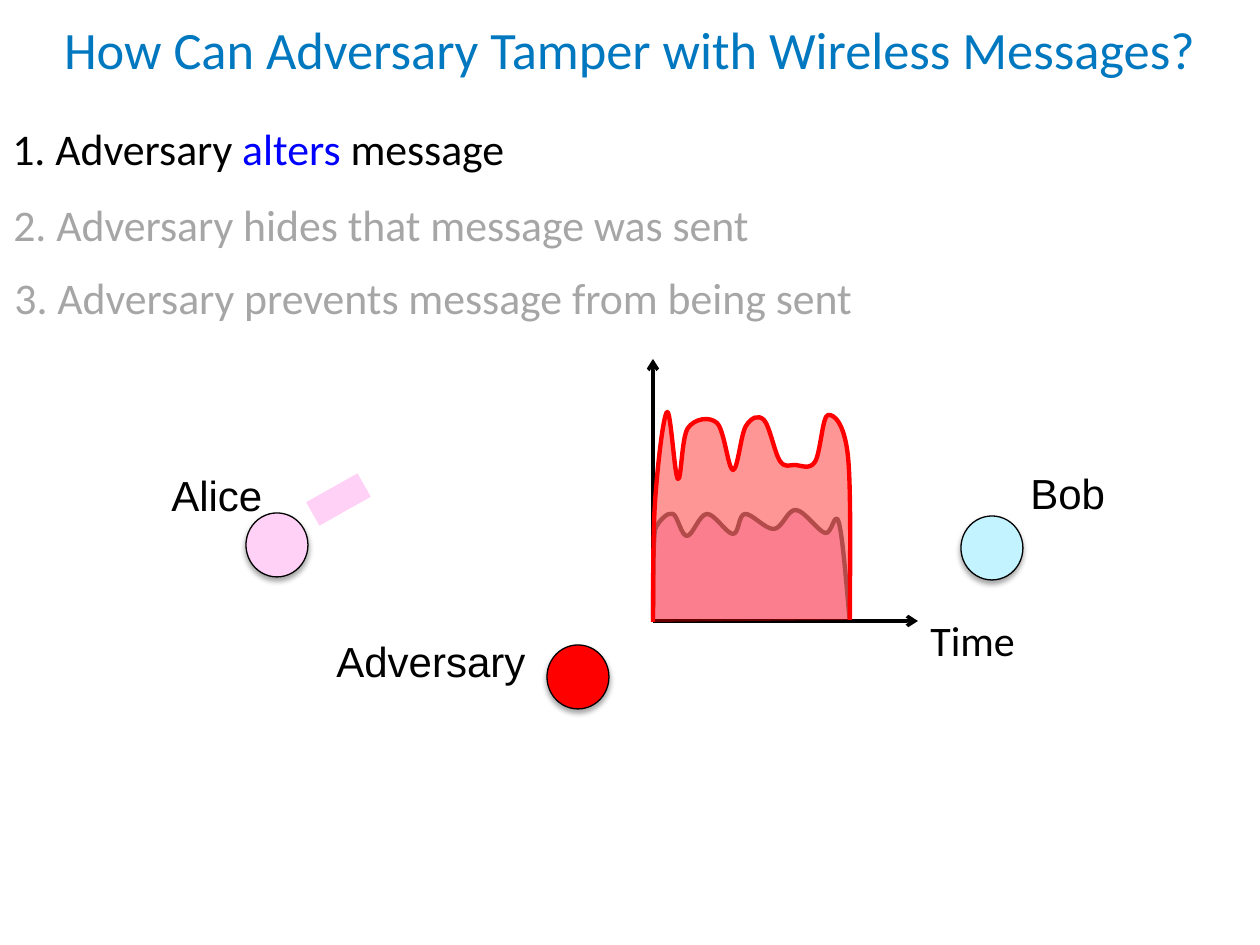
from pptx import Presentation, util as u
from pptx.dml.color import RGBColor
from pptx.enum import shapes, text
from pptx.oxml import parse_xml
from pptx.oxml.ns import nsdecls, qn
from lxml import etree

PX = u.Inches(1) // 126
CURVE_STEPS = 10  # path units per px
BLACK = RGBColor(0x00, 0x00, 0x00)
BLUE = RGBColor(0x00, 0x00, 0xFF)
TITLE_BLUE = RGBColor(0x00, 0x78, 0xC0)
GREY = RGBColor(0xA6, 0xA6, 0xA6)
CURVE_GREY = RGBColor(0x80, 0x80, 0x80)
PINK = RGBColor(0xFF, 0xD1, 0xF6)
SIGNAL_PINK = RGBColor(0xF9, 0xD7, 0xF2)
CYAN = RGBColor(0xC2, 0xF3, 0xFF)
RED = RGBColor(0xFF, 0x00, 0x00)

TITLE = "How Can Adversary Tamper with Wireless Messages?"
# place (left, top, width, height), coloured spans
ATTACKS = [
    ((0, 116, 633, 72), [("1. Adversary ", BLACK), ("alters", BLUE), (" message", BLACK)]),
    ((1, 192, 784, 71), [("2. Adversary hides that message was sent", GREY)]),
    ((2, 265, 905, 71), [("3. Adversary prevents message from being sent", GREY)]),
]
# name, label place, left and top of node, node colour
PARTIES = [
    ("Alice", (159, 463, 164, 63), (246, 513), PINK),
    ("Bob", (1018, 461, 164, 63), (961, 516), CYAN),
    ("Adversary", (324, 629, 221, 63), (547, 645), RED),
]
NODE_SIZE = (62, 64)
PACKET = (309, 486, 59, 27)
PACKET_TURN = 330.6
ORIGIN = (653, 621)
AXIS_ENDS = [(918, 621), (653, 359)]
TIME_PLACE = (918, 608, 129, 63)
SIGNAL = [(653, 619), (654, 544), (658, 524), (673, 514), (687, 536), (707, 514),
          (733, 534), (745, 514), (774, 529), (796, 510), (825, 533), (839, 523),
          (850, 622)]
JAMMING = [(653, 622), (655, 503), (667, 412), (678, 479), (688, 428), (717, 423),
           (733, 470), (746, 426), (764, 420), (780, 461), (795, 465), (815, 462),
           (828, 415), (848, 456), (850, 620)]


def emu(lengths):
    return [length * PX for length in lengths]


def add_text(page, place, spans, font, size, **paragraph_format):
    box = page.shapes.add_textbox(*emu(place))
    frame = box.text_frame
    frame.word_wrap = True
    para = frame.paragraphs[0]
    for name, value in paragraph_format.items():
        setattr(para, name, value)
    for words, color in spans:
        span = para.add_run()
        span.text = words
        for name, value in {"name": font, "size": u.Pt(size)}.items():
            setattr(span.font, name, value)
        span.font.color.rgb = color
    return frame


def paint(shape, fill, line=None, width=0):
    shape.shadow.inherit = False
    shape.fill.solid()
    shape.fill.fore_color.rgb = fill
    if line is None:
        shape.line.fill.background()
    else:
        shape.line.color.rgb = line
        shape.line.width = u.Pt(width)


def add_node(page, corner, color):
    node = page.shapes.add_shape(shapes.MSO_SHAPE.OVAL, *emu(corner + NODE_SIZE))
    paint(node, color, BLACK, 0.75)
    effects = node._element.spPr.find(qn("a:effectLst"))
    effects.append(parse_xml(
        f'<a:outerShdw {nsdecls("a")} blurRad="{u.Pt(3.1)}" dist="{u.Pt(1.8)}" '
        'dir="5400000" rotWithShape="0"><a:srgbClr val="000000">'
        '<a:alpha val="35000"/></a:srgbClr></a:outerShdw>'))


def add_axis(page, end):
    axis = page.shapes.add_connector(shapes.MSO_CONNECTOR.STRAIGHT, *emu(ORIGIN + end))
    axis.line.color.rgb = BLACK
    axis.line.width = u.Pt(2)
    etree.SubElement(axis.line._get_or_add_ln(), qn("a:tailEnd"), type="arrow")
    etree.SubElement(axis._element.spPr, qn("a:effectLst"))


def add_curve(page, knots, fill, line):
    """Draw a smooth curve through the knots, its tangents set by their neighbours."""
    knots = [(x * CURVE_STEPS, y * CURVE_STEPS) for x, y in knots]
    builder = page.shapes.build_freeform(*knots[0], scale=PX / CURVE_STEPS)
    builder.add_line_segments(knots[1:], close=False)
    curve = builder.convert_to_shape()
    paint(curve, fill, line, 2.5)
    left, top = (min(values) for values in zip(*knots))
    local = [(x - left, y - top) for x, y in knots]
    padded = [local[0], *local, local[-1]]
    segments = list(curve._element.iter(qn("a:lnTo")))
    for segment, before, start, end, after in zip(
            segments, padded, padded[1:], padded[2:], padded[3:]):
        controls = [
            [s + (e - b) / 6 for b, s, e in zip(before, start, end)],
            [e - (a - s) / 6 for s, e, a in zip(start, end, after)],
        ]
        segment.tag = qn("a:cubicBezTo")
        knot = segment[0]
        for x, y in controls:
            handle = etree.Element(qn("a:pt"), x=str(round(x)), y=str(round(y)))
            knot.addprevious(handle)
    return curve


def main():
    deck = Presentation()
    deck.slide_width, deck.slide_height = u.Inches(10), u.Inches(7.5)
    page = deck.slides.add_slide(deck.slide_layouts[6])

    title = add_text(page, (0, -2, 1260, 101), [(TITLE, TITLE_BLUE)], "Calibri", 30,
                     alignment=text.PP_ALIGN.CENTER)
    title.vertical_anchor = text.MSO_ANCHOR.MIDDLE
    for place, spans in ATTACKS:
        add_text(page, place, spans, "Calibri", 25)

    for name, place, corner, color in PARTIES:
        add_text(page, place, [(name, BLACK)], "Arial", 24)
        add_node(page, corner, color)
    packet = page.shapes.add_shape(shapes.MSO_SHAPE.RECTANGLE, *emu(PACKET))
    packet.rotation = PACKET_TURN
    paint(packet, PINK)

    add_curve(page, SIGNAL, SIGNAL_PINK, CURVE_GREY)
    for end in AXIS_ENDS:
        add_axis(page, end)
    add_text(page, TIME_PLACE, [("Time", BLACK)], "Calibri", 24)
    jamming = add_curve(page, JAMMING, RED, RED)
    color = jamming._element.spPr.find(qn("a:solidFill"))[0]
    etree.SubElement(color, qn("a:alpha"), val="41000")

    deck.save("out.pptx")


if __name__ == "__main__":
    main()
